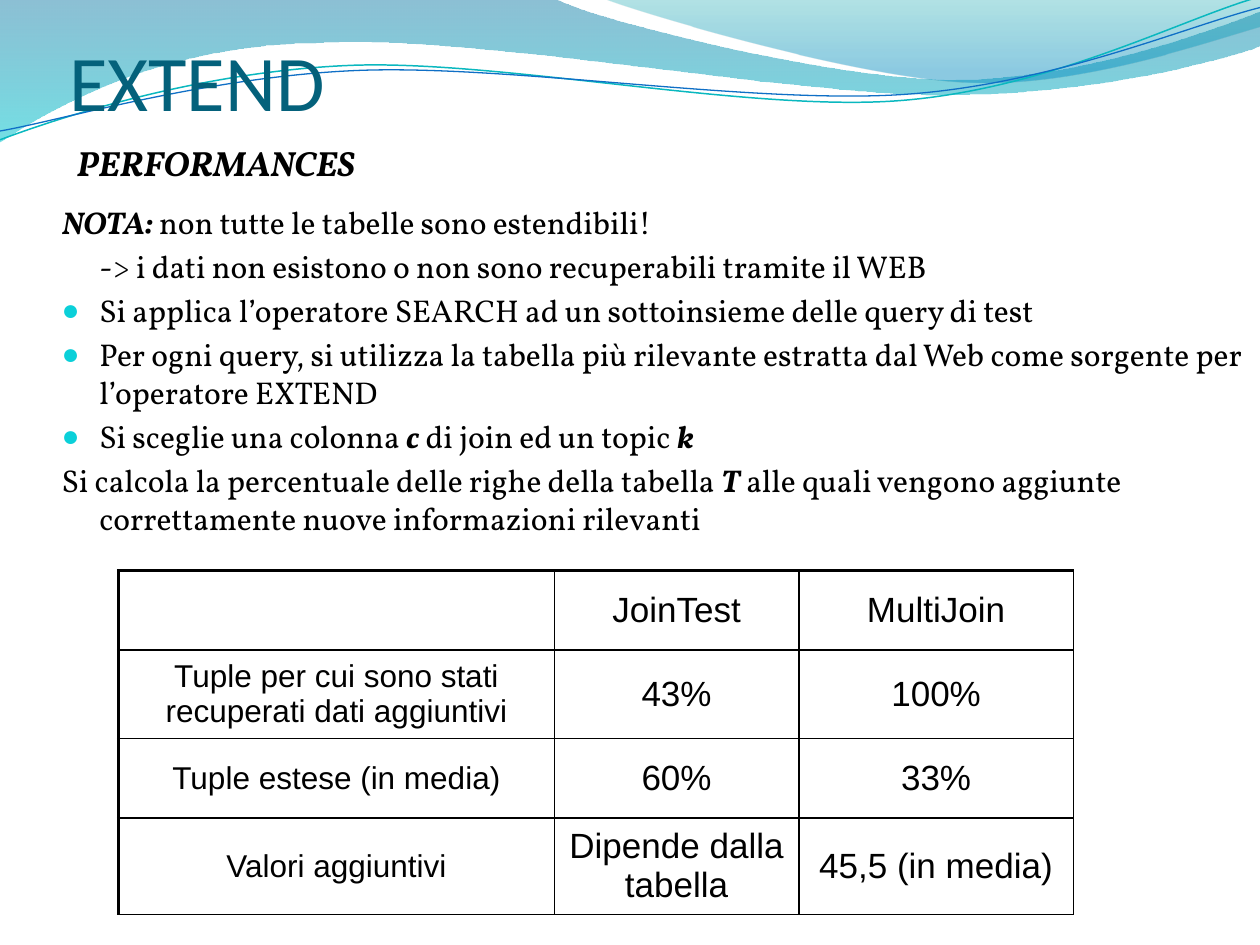
"""Build the EXTEND performance slide with its wave header, notes and results table."""
import pptx
import pptx.dml.color
import pptx.enum.text
import pptx.oxml.ns
import pptx.util
from pptx.util import Inches

COLORS = {
    "text": "000000", "title": "04617B", "bullet": "0BD0D9",
    "deep_blue": "0074A1", "cyan": "00C6CF", "teal": "00A1A9", "sky": "008BBF",
    "teal_line": "0AB8BF", "blue_line": "0F6FC6",
}
ALIGN = pptx.enum.text.PP_ALIGN
MIDDLE = pptx.enum.text.MSO_ANCHOR.MIDDLE
qn = pptx.oxml.ns.qn


def write_text(paragraph, text, size=18, font="Vollkorn", color="text", emphasis=False,
               align=ALIGN.LEFT, before=None, hanging=0, bullet=False):
    run = paragraph.add_run()
    run.text = text
    run.font.size = pptx.util.Pt(size)
    run.font.name = font
    run.font.bold = run.font.italic = emphasis
    run.font.color.rgb = pptx.dml.color.RGBColor.from_string(COLORS[color])
    paragraph.alignment = align
    properties = paragraph._p.get_or_add_pPr()
    if before is not None:
        paragraph.space_before = pptx.util.Pt(0)
        spacing = properties.find(qn("a:spcBef"))
        spacing.remove(spacing[0])
        spacing.append(spacing.makeelement(qn("a:spcPct"), {"val": str(before * 1000)}))
    if hanging:
        properties.set("marL", str(Inches(hanging)))
        properties.set("indent", str(-Inches(hanging)))
    if bullet:
        for tag, attributes in (("a:buClr", {}), ("a:buSzPct", {"val": "95000"}),
                                ("a:buFont", {"typeface": "Arial"}),
                                ("a:buChar", {"char": "●"})):
            properties.append(properties.makeelement(qn(tag), attributes))
        bullet_color = properties.find(qn("a:buClr"))
        bullet_color.append(
            bullet_color.makeelement(qn("a:srgbClr"), {"val": COLORS["bullet"]}))


def draw_wave(shapes, start, segments, closed):
    points = [(Inches(segment[i]), Inches(segment[i + 1]))
              for segment in segments for i in range(0, len(segment), 2)]
    builder = shapes.build_freeform(Inches(start[0]), Inches(start[1]))
    builder.add_line_segments(points, close=closed)
    shape = builder.convert_to_shape()
    shape.shadow.inherit = False
    steps = iter(list(shape.element.iter(qn("a:lnTo"))))
    for segment in segments:
        group = [next(steps) for _ in range(len(segment) // 2)]
        if len(group) == 3:
            curve = group[0].makeelement(qn("a:cubicBezTo"), {})
            group[0].addprevious(curve)
            for step in group:
                curve.append(step[0])
                step.getparent().remove(step)
    return shape


presentation = pptx.Presentation()
presentation.slide_width = Inches(10)
presentation.slide_height = Inches(7.5)
slide = presentation.slides.add_slide(presentation.slide_layouts[5])
shapes = slide.shapes

filled_waves = [
    ((0, -0.01),
     [(4.4, -0.01), (4.76, 0.17, 6.64, 0.63, 7.58, 0.63), (8.53, 0.63, 9.58, 0.26, 10, 0.09),
      (10.01, 0.36), (9.83, 0.44, 8.7, 0.76, 7.46, 0.75), (6.22, 0.75, 3.82, 0.28, 2.57, 0.34),
      (1.29, 0.35, 0.46, 0.83, -0.01, 1.13), (0, -0.01)],
     [("deep_blue", 0, 45), ("cyan", 1, 55)]),
    ((4.79, -0.01),
     [(5.09, 0.11, 6.82, 0.62, 7.69, 0.65), (8.56, 0.69, 9.61, 0.32, 10, 0.21), (10, 0),
      (4.79, -0.01)],
     [("teal", 0, 30), ("sky", 0.8, 45)]),
]
for start, segments, stops in filled_waves:
    wave = draw_wave(shapes, start, segments, True)
    wave.line.fill.background()
    wave.fill.gradient()
    wave.fill.gradient_angle = 270
    for stop, (color, position, _) in zip(wave.fill.gradient_stops, stops):
        stop.color.rgb = pptx.dml.color.RGBColor.from_string(COLORS[color])
        stop.position = position
    color_elements = list(wave.element.spPr.iter(qn("a:srgbClr")))
    for element, (_, _, opacity) in zip(color_elements, stops):
        element.append(element.makeelement(qn("a:alpha"), {"val": str(opacity * 1000)}))

line_waves = [
    ((0, 1.11), [(0.48, 0.93, 1.58, 0.57, 2.77, 0.52), (3.95, 0.47, 5.93, 0.89, 7.13, 0.8),
                 (8.33, 0.71, 9.38, 0.15, 9.98, -0.02)], "teal_line", 0.85),
    ((0, 1.04), [(0.47, 0.96, 1.64, 0.61, 2.83, 0.56), (4.03, 0.51, 5.97, 0.83, 7.17, 0.75),
                 (8.36, 0.67, 9.41, 0.21, 10, 0.06)], "blue_line", 0.75),
]
for start, segments, color, width in line_waves:
    wave = draw_wave(shapes, start, segments, False)
    wave.fill.background()
    wave.line.color.rgb = pptx.dml.color.RGBColor.from_string(COLORS[color])
    wave.line.width = pptx.util.Pt(width)

notes = [
    (False, [("NOTA:", True), (" non tutte le tabelle sono estendibili!", False)]),
    (False, [("\t-> i dati non esistono o non sono recuperabili tramite il WEB", False)]),
    (True, [("Si applica l’operatore SEARCH ad un sottoinsieme delle query di test", False)]),
    (True, [("Per ogni query, si utilizza la tabella più rilevante estratta dal Web come "
             "sorgente per l’operatore EXTEND", False)]),
    (True, [("Si sceglie una colonna ", False), ("c", True),
            (" di join ed un topic ", False), ("k", True)]),
    (False, [("Si calcola la percentuale delle righe della tabella ", False), ("T", True),
             (" alle quali vengono aggiunte correttamente nuove informazioni rilevanti", False)]),
]
body = shapes.add_textbox(Inches(0.39), Inches(1.56), Inches(9.61), Inches(5.94))
body.text_frame.word_wrap = True
for index, (bullet, runs) in enumerate(notes):
    paragraph = body.text_frame.add_paragraph() if index else body.text_frame.paragraphs[0]
    for position, (text, emphasis) in enumerate(runs):
        write_text(paragraph, text, emphasis=emphasis, before=20, hanging=0.3,
                   bullet=bullet and position == 0)

title = shapes.title
shapes.element.append(title.element)
title.left, title.top, title.width, title.height = map(Inches, (0.55, 0.16, 9, 0.85))
frame = title.text_frame
frame.auto_size = pptx.enum.text.MSO_AUTO_SIZE.NONE
frame.vertical_anchor = pptx.enum.text.MSO_ANCHOR.BOTTOM
frame.margin_left = frame.margin_right = frame.margin_bottom = 0
frame.margin_top = Inches(0.05)
write_text(frame.paragraphs[0], "EXTEND", size=45, font="Calibri", color="title")

subtitle = shapes.add_textbox(Inches(0.51), Inches(1.07), Inches(2.99), Inches(0.47))
subtitle.text_frame.word_wrap = True
write_text(subtitle.text_frame.paragraphs[0], "PERFORMANCES", size=20, emphasis=True,
           before=20, hanging=0.3)

results = [
    ["", "JoinTest", "MultiJoin"],
    ["Tuple per cui sono stati recuperati dati aggiuntivi", "43%", "100%"],
    ["Tuple estese (in media)", "60%", "33%"],
    ["Valori aggiuntivi", "Dipende dalla tabella", "45,5 (in media)"],
]
table = shapes.add_table(4, 3, Inches(0.94), Inches(4.53), Inches(7.58), Inches(2.59)).table
table.first_row = table.horz_banding = False
for column, width in zip(table.columns, (3.46, 1.94, 2.18)):
    column.width = Inches(width)
for row, height in zip(table.rows, (0.63, 0.7, 0.63, 0.63)):
    row.height = Inches(height)
for row_index, values in enumerate(results):
    for column_index, value in enumerate(values):
        cell = table.cell(row_index, column_index)
        cell.vertical_anchor = MIDDLE
        if value:
            write_text(cell.text_frame.paragraphs[0], value, size=20 if column_index else 18,
                       font="Arial", align=ALIGN.CENTER, before=20)
        properties = cell._tc.get_or_add_tcPr()
        widths = {"a:lnL": 1 if column_index else 2.25, "a:lnR": 1,
                  "a:lnT": 1 if row_index else 2.25, "a:lnB": 1}
        for tag, width in widths.items():
            border = properties.makeelement(qn(tag), {"w": str(pptx.util.Pt(width))})
            fill = border.makeelement(qn("a:solidFill"), {})
            fill.append(fill.makeelement(qn("a:srgbClr"), {"val": COLORS["text"]}))
            border.append(fill)
            properties.append(border)
        cell.fill.background()

presentation.save("out.pptx")
